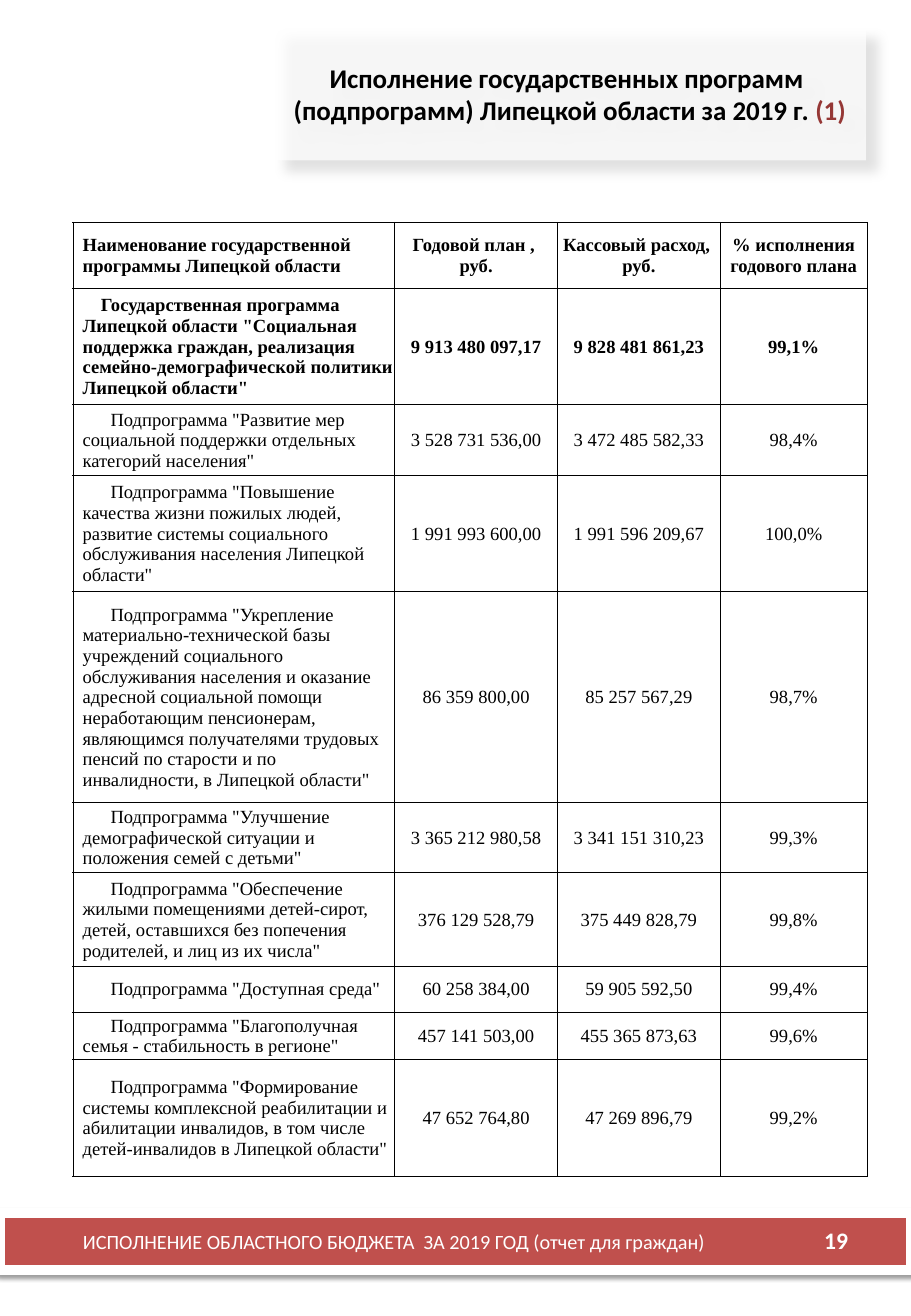
from lxml.etree import SubElement
from pptx import Presentation
from pptx.dml.color import RGBColor
from pptx.enum.shapes import MSO_SHAPE as SHAPE
from pptx.enum.text import MSO_ANCHOR as ANCHOR, PP_ALIGN as ALIGN
from pptx.oxml.ns import qn
from pptx.util import Inches, Pt

COLORS = {"black": "000000", "white": "FFFFFF", "red": "C0504D", "dark_red": "953735"}
TITLE_FONT = {"name": "Calibri", "size": Pt(16), "bold": True}
FOOTER_FONT = {"name": "Calibri", "size": Pt(12), "bold": False}
NUMBER_FONT = {"name": "Calibri", "size": Pt(14), "bold": True}
CELL_FONT = {"name": "Times New Roman", "size": Pt(11), "bold": False}

COL_WIDTHS = [2.65, 1.34, 1.34, 1.21]
ROW_HEIGHTS = [0.19, 0.54, 0.96, 0.58, 0.96, 1.73, 0.58, 0.77, 0.38, 0.39, 0.96]
HEADER_ROW, PROGRAM_ROW = 1, 2
PROGRAM_INDENT, SUBPROGRAM_INDENT = 0.15, 0.23
ROWS = [
    ["", "", "", ""],
    ["Наименование государственной программы Липецкой области",
     "Годовой план ,  руб.", "Кассовый расход,  руб.", "% исполнения годового плана"],
    ['Государственная программа Липецкой области "Социальная поддержка граждан, реализация '
     'семейно-демографической политики Липецкой области"',
     "9 913 480 097,17", "9 828 481 861,23", "99,1%"],
    ['Подпрограмма "Развитие мер социальной поддержки отдельных категорий населения"',
     "3 528 731 536,00", "3 472 485 582,33", "98,4%"],
    ['Подпрограмма "Повышение качества жизни пожилых людей, развитие системы социального '
     'обслуживания населения Липецкой области"',
     "1 991 993 600,00", "1 991 596 209,67", "100,0%"],
    ['Подпрограмма "Укрепление материально-технической базы учреждений социального '
     'обслуживания населения и оказание адресной социальной помощи неработающим пенсионерам, '
     'являющимся получателями трудовых пенсий по старости и по инвалидности, в Липецкой области"',
     "86 359 800,00", "85 257 567,29", "98,7%"],
    ['Подпрограмма "Улучшение демографической ситуации и положения семей с детьми"',
     "3 365 212 980,58", "3 341 151 310,23", "99,3%"],
    ['Подпрограмма "Обеспечение жилыми помещениями детей-сирот, детей, оставшихся без '
     'попечения родителей, и лиц из их числа"',
     "376 129 528,79", "375 449 828,79", "99,8%"],
    ['Подпрограмма "Доступная среда"', "60 258 384,00", "59 905 592,50", "99,4%"],
    ['Подпрограмма "Благополучная семья - стабильность в регионе"',
     "457 141 503,00", "455 365 873,63", "99,6%"],
    ['Подпрограмма "Формирование системы комплексной реабилитации и абилитации инвалидов, '
     'в том числе детей-инвалидов в Липецкой области"',
     "47 652 764,80", "47 269 896,79", "99,2%"],
]


def rgb(name):
    """Return the named colour."""
    return RGBColor.from_string(COLORS[name])


def style(font, fmt, color):
    """Apply a dict of font settings and a colour."""
    for key, value in fmt.items():
        setattr(font, key, value)
    font.color.rgb = rgb(color)


def add_solid(parent, color, alpha=None):
    """Append a solid colour with optional opacity in percent to an XML element."""
    clr = SubElement(parent, qn("a:srgbClr"), val=COLORS[color])
    if alpha is not None:
        SubElement(clr, qn("a:alpha"), val=str(alpha * 1000))


def add_panel(slide, box, fill, shadow):
    """Draw a rectangle with an outer shadow given as opacity, blur, distance, angle."""
    sp = slide.shapes.add_shape(SHAPE.RECTANGLE, *map(Inches, box))
    sp.shadow.inherit = False
    sp.fill.solid()
    sp.fill.fore_color.rgb = rgb(fill)
    sp.line.fill.background()
    alpha, blur, dist, angle = shadow
    effects = sp._element.spPr.find(qn("a:effectLst"))
    outer = SubElement(effects, qn("a:outerShdw"), blurRad=str(Pt(blur)), dist=str(Pt(dist)),
                       dir=str(angle * 60000), rotWithShape="0")
    add_solid(outer, "black", alpha)
    return sp


def write(tf, parts, fmt, align):
    """Write coloured runs as one vertically centred paragraph."""
    tf.word_wrap = True
    tf.vertical_anchor = ANCHOR.MIDDLE
    p = tf.paragraphs[0]
    p.alignment = align
    for text, color in parts:
        r = p.add_run()
        r.text = text
        style(r.font, fmt, color)


def add_title(slide, box):
    """Build the translucent title panel."""
    sp = add_panel(slide, box, "white", (16, 7, 10, 45))
    color = sp._element.spPr.find(qn("a:solidFill"))[0]
    SubElement(color, qn("a:alpha"), val="70000")
    parts = [("Исполнение государственных программ  (подпрограмм) Липецкой области за 2019 г. ",
              "black"), ("(1)", "dark_red")]
    write(sp.text_frame, parts, TITLE_FONT, ALIGN.CENTER)


def add_footer(slide, box):
    """Build the footer band with its caption and page number."""
    left, top, _, _ = box
    band = add_panel(slide, box, "red", (38, 3.1, 1.6, 90))
    band.line.color.rgb = rgb("white")
    band.line.width = Pt(6)
    labels = [
        (0.29, 5.91, 0.31, "ИСПОЛНЕНИЕ ОБЛАСТНОГО БЮДЖЕТА  ЗА 2019 ГОД (отчет для граждан)",
         FOOTER_FONT, ALIGN.CENTER),
        (6.43, 0.65, 0.29, "19", NUMBER_FONT, ALIGN.RIGHT),
    ]
    for dx, width, height, text, fmt, align in labels:
        label = slide.shapes.add_textbox(*map(Inches, (left + dx, top + 0.08, width, height)))
        write(label.text_frame, [(text, "white")], fmt, align)


def add_borders(cell, sides):
    """Draw thin black lines on the given sides of a cell and none on the others."""
    tcPr = cell._tc.get_or_add_tcPr()
    for side in "LRTB":
        ln = SubElement(tcPr, qn(f"a:ln{side}"), w=str(Pt(0.5)))
        if side in sides:
            add_solid(SubElement(ln, qn("a:solidFill")), "black")
        else:
            SubElement(ln, qn("a:noFill"))


def add_cell(cell, text, row, col):
    """Fill and format one table cell."""
    add_borders(cell, "LRTB" if row else "B")
    cell.fill.background()
    cell.vertical_anchor = ANCHOR.MIDDLE
    margins = {"left": 0.01 if col else 0.08, "top": 0.01, "right": 0.01, "bottom": 0}
    for side, value in margins.items():
        setattr(cell, f"margin_{side}", Inches(value))
    p = cell.text_frame.paragraphs[0]
    if not text:
        SubElement(p._p, qn("a:endParaRPr"), sz="800")
        return
    p.text = text
    p.alignment = ALIGN.CENTER if col else ALIGN.LEFT
    if row > HEADER_ROW and not col:
        indent = PROGRAM_INDENT if row == PROGRAM_ROW else SUBPROGRAM_INDENT
        p._p.get_or_add_pPr().set("indent", str(Inches(indent)))
    for r in p.runs:
        style(r.font, {**CELL_FONT, "bold": row <= PROGRAM_ROW}, "black")


def add_programs(slide, box):
    """Build the table of programmes and their execution."""
    frame = slide.shapes.add_table(len(ROWS), len(COL_WIDTHS), *map(Inches, box))
    table = frame.table
    table.first_row = table.horz_banding = False
    for column, width in zip(table.columns, COL_WIDTHS):
        column.width = Inches(width)
    for row, height in zip(table.rows, ROW_HEIGHTS):
        row.height = Inches(height)
    for i, texts in enumerate(ROWS):
        for j, text in enumerate(texts):
            add_cell(table.cell(i, j), text, i, j)
    table.cell(0, 2).merge(table.cell(0, 3))


def main():
    """Assemble and save the slide."""
    prs = Presentation()
    prs.slide_width, prs.slide_height = Inches(7.5), Inches(10.83)
    slide = prs.slides.add_slide(prs.slide_layouts[6])
    add_footer(slide, (0, 9.98, 7.5, 0.47))
    add_title(slide, (2.25, 0.22, 4.88, 1.1))
    add_programs(slide, (0.6, 1.64, sum(COL_WIDTHS), sum(ROW_HEIGHTS)))
    prs.save("out.pptx")


if __name__ == "__main__":
    main()
